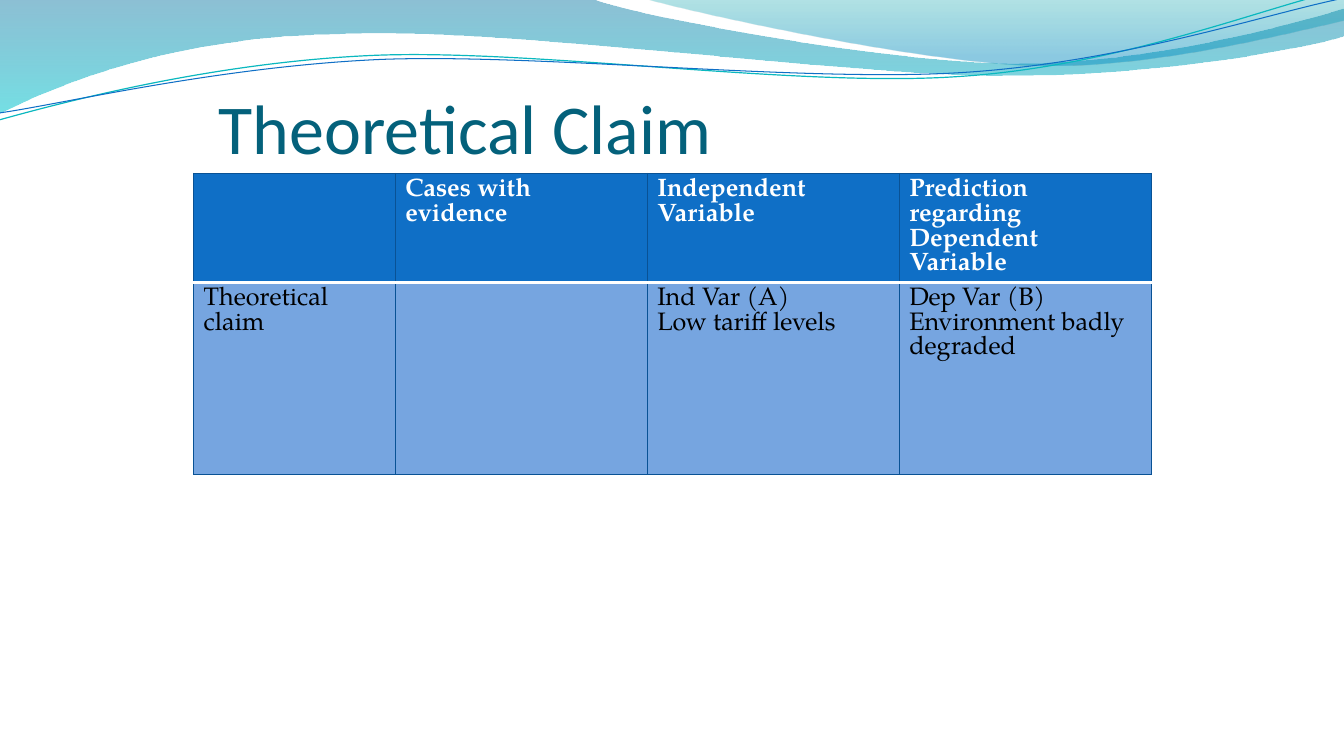
from lxml import etree
from pptx import Presentation
from pptx.dml.color import RGBColor
from pptx.enum.text import MSO_ANCHOR
from pptx.oxml.ns import qn
from pptx.util import Cm, Pt

ANCHOR_BOTTOM = MSO_ANCHOR.BOTTOM

WHITE = RGBColor(0xFF, 0xFF, 0xFF)
BLACK = RGBColor(0x00, 0x00, 0x00)
TITLE_TEAL = RGBColor(0x04, 0x61, 0x7B)
BLUE = RGBColor(0x0F, 0x6F, 0xC6)
BODY_BLUE = RGBColor(0x76, 0xA5, 0xE0)
BORDER_BLUE = RGBColor(0x09, 0x52, 0x95)
LINE_TEAL = RGBColor(0x0A, 0xB8, 0xBF)
WAVE_BLUE = RGBColor(0x00, 0x74, 0xA1)
WAVE_CYAN = RGBColor(0x00, 0xC6, 0xCF)
CREST_TEAL = RGBColor(0x00, 0xA1, 0xA9)
CREST_BLUE = RGBColor(0x00, 0x8B, 0xBF)

# Outlines in inches: a pair is a corner, six numbers are a Bézier curve.
CM_PER_INCH = 2.54
WAVE = [(0, 0), (5.87, -0.01), (6.34, 0.17, 8.85, 0.63, 10.11, 0.63),
        (11.38, 0.63, 12.78, 0.26, 13.33, 0.09), (13.35, 0.36),
        (13.11, 0.44, 11.6, 0.76, 9.94, 0.75),
        (8.29, 0.75, 5.09, 0.28, 3.43, 0.34),
        (1.72, 0.36, 0.61, 0.83, -0.01, 1.13)]
CREST = [(6.39, -0.01), (6.79, 0.11, 9.09, 0.62, 10.25, 0.65),
         (11.41, 0.69, 12.82, 0.32, 13.33, 0.21), (13.33, 0)]
TEAL_LINE = [(-0.01, 1.19), (0.64, 1.01, 2.11, 0.62, 3.69, 0.55),
             (5.27, 0.48, 7.9, 0.87, 9.5, 0.76),
             (11.1, 0.66, 12.52, 0.08, 13.31, -0.1)]
BLUE_LINE = [(0, 1.12), (0.63, 1.03, 2.18, 0.66, 3.78, 0.59),
             (5.37, 0.53, 7.96, 0.82, 9.55, 0.72),
             (11.15, 0.62, 12.55, 0.14, 13.34, -0.02)]

COLUMN_WIDTHS = [5.08, 6.35, 6.35, 6.35]
ROW_HEIGHTS = [2.29, 4.83]
ROWS = [
    [[], ["Cases with evidence"], ["Independent Variable"],
     ["Prediction regarding Dependent Variable"]],
    [["Theoretical claim"], [], ["Ind Var (A)", "Low tariff levels"],
     ["Dep Var (B)", "Environment badly degraded"]],
]


class SlideBuilder:
    title_font = "Calibri"
    table_font = "TeX Gyre Pagella"
    table_line_pitch = 17.7

    def __init__(self, slide):
        self.slide = slide

    def outline(self, parts, close):
        """Draw through all control points, then join each curve's three into a Bézier."""
        points = [(Cm(part[i] * CM_PER_INCH), Cm(part[i + 1] * CM_PER_INCH))
                  for part in parts for i in range(0, len(part), 2)]
        builder = self.slide.shapes.build_freeform(*points[0], scale=1.0)
        builder.add_line_segments(points[1:], close=close)
        shape = builder.convert_to_shape()
        shape.shadow.inherit = False
        segments = iter(list(shape.element.iter(qn("a:lnTo"))))
        for part in parts[1:]:
            segment = next(segments)
            if len(part) == 6:
                curve = etree.Element(qn("a:cubicBezTo"))
                segment.addprevious(curve)
                for control in (segment, next(segments), next(segments)):
                    curve.append(control[0])
                    control.getparent().remove(control)
        return shape

    def gradient_wave(self, parts, stops):
        """Stops are (position, colour, opacity percent), top to bottom."""
        shape = self.outline(parts, True)
        shape.line.fill.background()
        shape.fill.gradient()
        shape.fill.gradient_angle = 270
        for stop, (position, color, _) in zip(shape.fill.gradient_stops, stops):
            stop.position = position
            stop.color.rgb = color
        gradient = shape.element.spPr.find(qn("a:gradFill"))
        for color, stop in zip(gradient.iter(qn("a:srgbClr")), stops):
            etree.SubElement(color, qn("a:alpha")).set("val", str(stop[2] * 1000))

    def wave_line(self, parts, color, width):
        shape = self.outline(parts, False)
        shape.fill.background()
        shape.line.color.rgb = color
        shape.line.width = Pt(width)

    def run(self, paragraph, text, font, size, color, bold=False):
        run = paragraph.add_run()
        run.text = text
        run.font.name = font
        run.font.size = Pt(size)
        run.font.color.rgb = color
        run.font.bold = bold

    def title(self, text, left, top, width, height):
        box = self.slide.shapes.add_textbox(Cm(left), Cm(top), Cm(width), Cm(height))
        frame = box.text_frame
        frame.word_wrap = True
        frame.vertical_anchor = ANCHOR_BOTTOM
        frame.margin_left = frame.margin_right = frame.margin_bottom = 0
        self.run(frame.paragraphs[0], text, self.title_font, 50, TITLE_TEAL)

    def border(self, cell, index, side, color, width):
        line = etree.Element(qn(f"a:ln{side}"), w=str(Pt(width)))
        fill = etree.SubElement(line, qn("a:solidFill"))
        etree.SubElement(fill, qn("a:srgbClr"), val=str(color))
        cell._tc.get_or_add_tcPr().insert(index, line)

    def cell(self, cell, lines, header):
        cell.fill.solid()
        cell.fill.fore_color.rgb = BLUE if header else BODY_BLUE
        for index, side in enumerate("LRTB" if header else "LRB"):
            style = (WHITE, 2) if header and side == "B" else (BORDER_BLUE, 0.75)
            self.border(cell, index, side, *style)
        frame = cell.text_frame
        for index, text in enumerate(lines):
            paragraph = frame.add_paragraph() if index else frame.paragraphs[0]
            paragraph.line_spacing = Pt(self.table_line_pitch)
            self.run(paragraph, text, self.table_font, 18,
                     WHITE if header else BLACK, header)

    def table(self, rows, left, top, widths, heights):
        table = self.slide.shapes.add_table(
            len(rows), len(widths), Cm(left), Cm(top),
            Cm(sum(widths)), Cm(sum(heights))).table
        table.horz_banding = False
        for column, width in zip(table.columns, widths):
            column.width = Cm(width)
        for row_index, (row, height) in enumerate(zip(rows, heights)):
            table.rows[row_index].height = Cm(height)
            for column_index, lines in enumerate(row):
                self.cell(table.cell(row_index, column_index), lines, row_index == 0)


def main():
    presentation = Presentation()
    presentation.slide_width = Cm(33.87)
    presentation.slide_height = Cm(19.05)
    builder = SlideBuilder(presentation.slides.add_slide(presentation.slide_layouts[6]))
    builder.gradient_wave(WAVE, [(0, WAVE_BLUE, 45), (1, WAVE_CYAN, 55)])
    builder.gradient_wave(CREST, [(0, CREST_TEAL, 30), (0.8, CREST_BLUE, 45)])
    builder.wave_line(TEAL_LINE, LINE_TEAL, 0.85)
    builder.wave_line(BLUE_LINE, BLUE, 0.75)
    builder.title("Theoretical Claim", 5.51, 1.07, 22.86, 3.18)
    builder.table(ROWS, 4.88, 4.37, COLUMN_WIDTHS, ROW_HEIGHTS)
    presentation.save("out.pptx")


if __name__ == "__main__":
    main()
